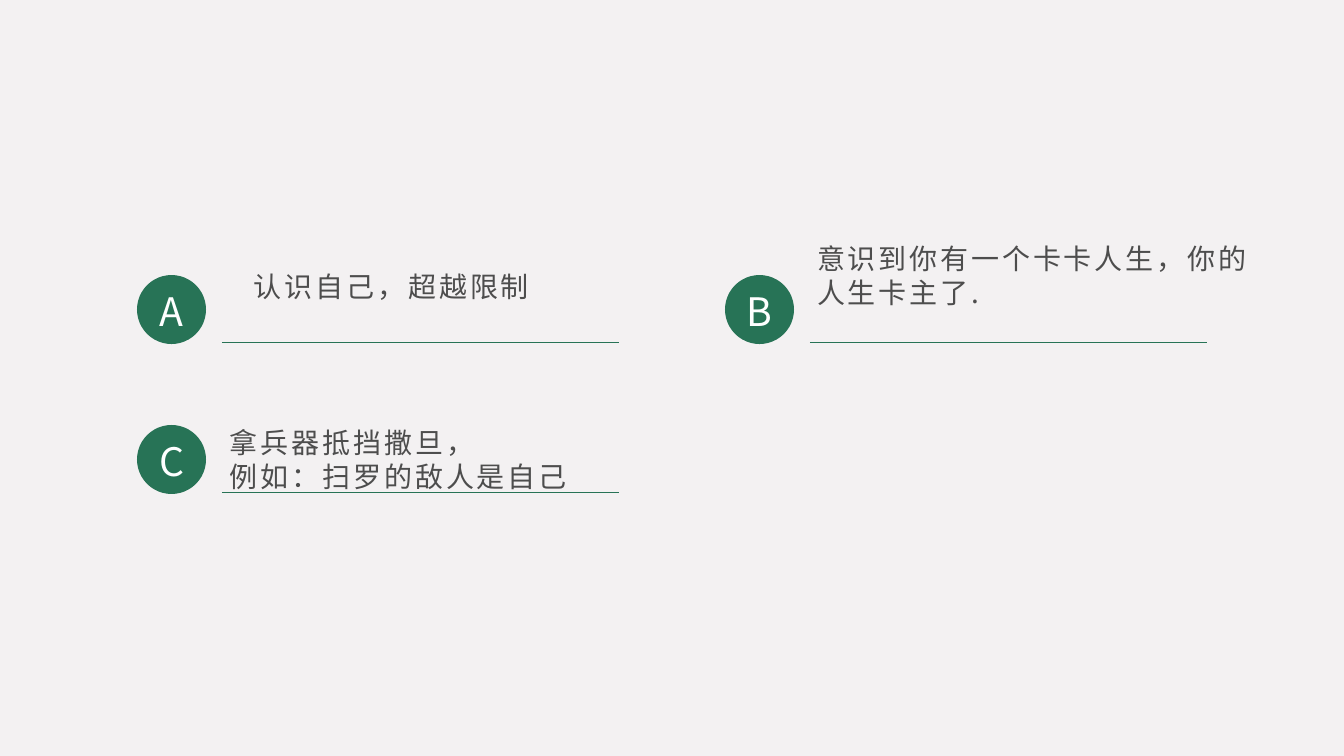
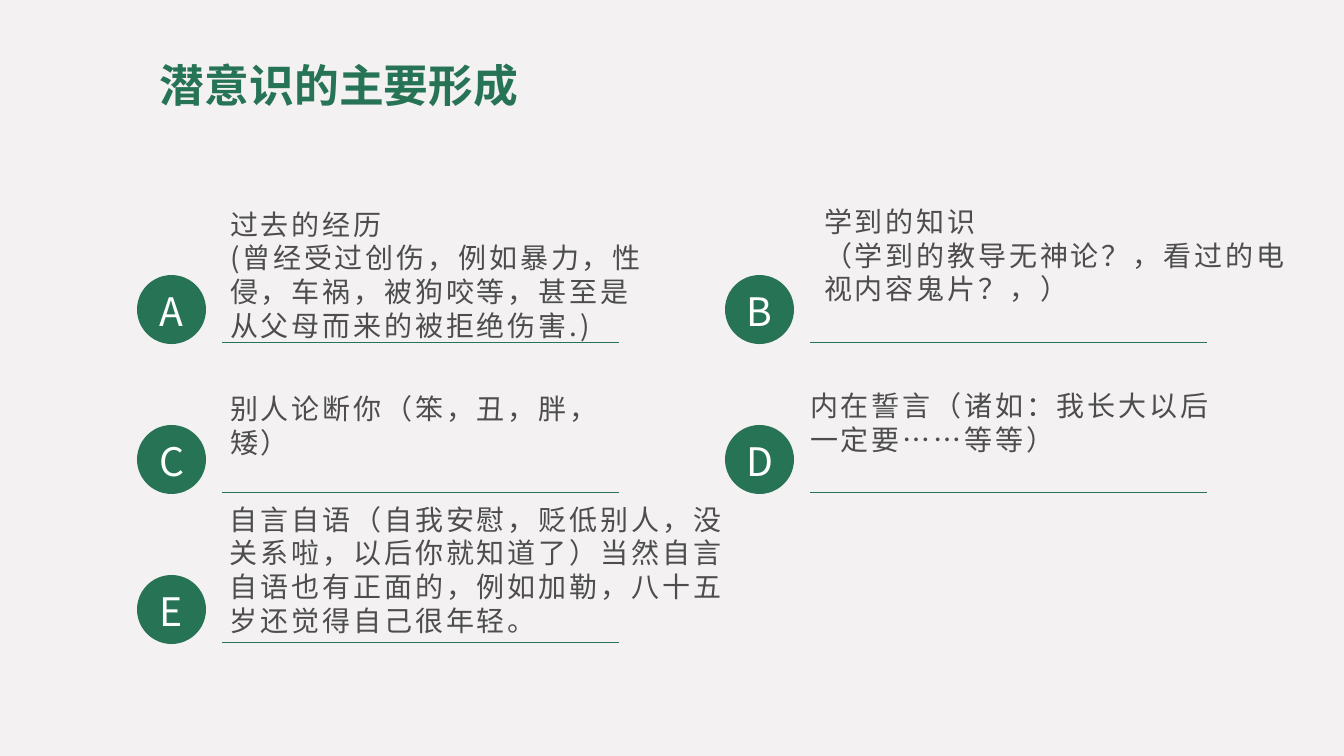
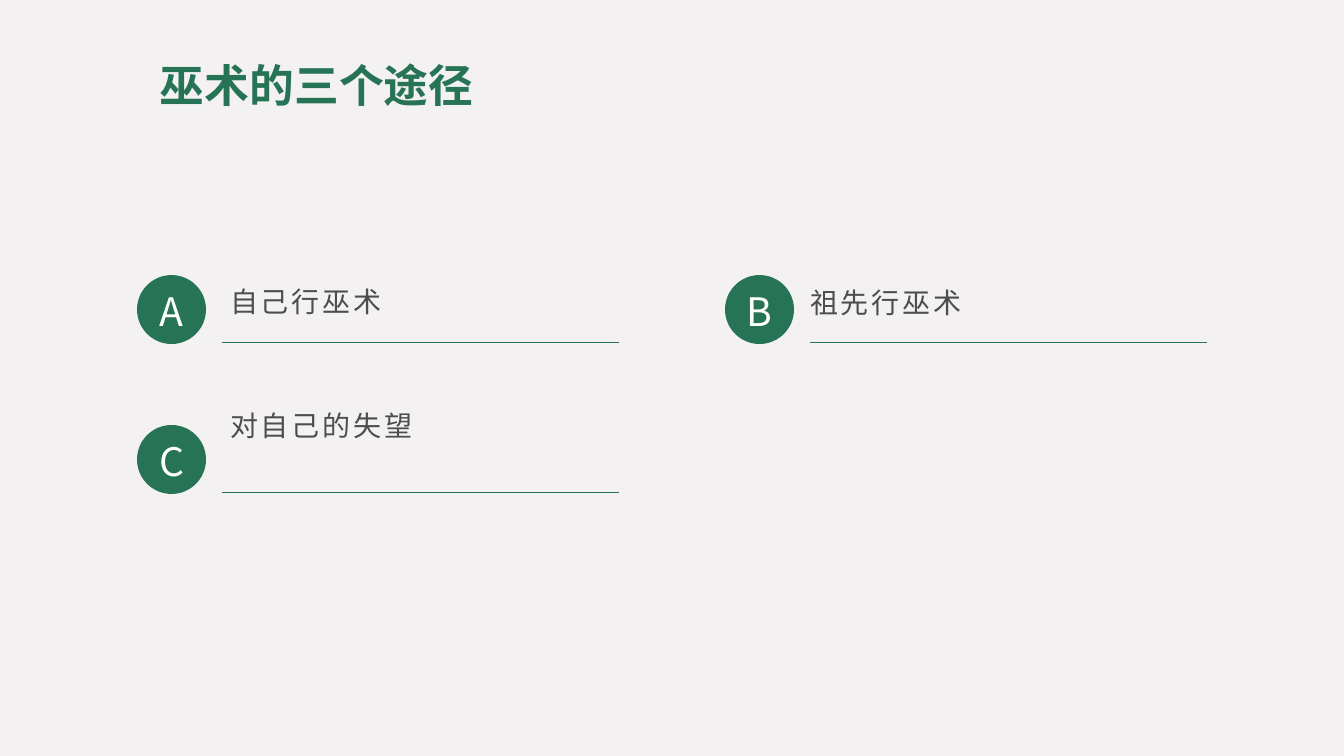
"""Build three slides of lettered points on underlined rows."""
from lxml import etree
from pptx import Presentation
from pptx import util as u
from pptx.dml.color import RGBColor
from pptx.enum import shapes, text
from pptx.oxml.ns import qn

FONT = "Noto Sans CJK SC"
GREEN, GREY, WHITE, PAPER = "277356", "4D4D4D", "FEFFFF", "F3F1F2"
SLIDE_WIDTH, SLIDE_HEIGHT = 1344, 756
SCALE = u.Inches(1) / 100.8
TITLE_BOX = (150, 53, 914, 65)
BADGE_LEFT, BADGE_TOP, BADGE_SIZE = 137, 275, 69
RULE_LEFT, RULE_TOP, RULE_WIDTH = 222, 342, 397
COLUMN_STEP, ROW_STEP, COLUMNS = 588, 150, 2
TEXT_INSET = 8

SLIDES = [
    {"title": None, "points": [
        ("A", 0, (246, 242, 417, 88), ["认识自己，超越限制"]),
        ("B", 1, (809, 226, 465, 98), ["意识到你有一个卡卡人生，你的人生卡主了."]),
        ("C", 2, (222, 406, 481, 107), ["拿兵器抵挡撒旦，", "例如：扫罗的敌人是自己"]),
    ]},
    {"title": "潜意识的主要形成", "points": [
        ("A", 0, (222, 206, 425, 137),
         ["过去的经历", "(曾经受过创伤，例如暴力，性侵，车祸，被狗咬等，甚至是从父母而来的被拒绝伤害.)"]),
        ("B", 1, (816, 186, 493, 138),
         ["学到的知识", "（学到的教导无神论？，看过的电视内容鬼片？，）"]),
        ("C", 2, (222, 371, 425, 108), ["别人论断你（笨，丑，胖，矮）"]),
        ("D", 3, (802, 350, 426, 144), ["内在誓言（诸如：我长大以后一定要……等等）"]),
        ("E", 4, (222, 492, 514, 155),
         ["自言自语（自我安慰，贬低别人，没关系啦，以后你就知道了）"
          "当然自言自语也有正面的，例如加勒，八十五岁还觉得自己很年轻。"]),
    ]},
    {"title": "巫术的三个途径", "points": [
        ("A", 0, (222, 233, 425, 137), ["自己行巫术"]),
        ("B", 1, (802, 233, 493, 138), ["祖先行巫术"]),
        ("C", 2, (222, 371, 425, 108), ["对自己的失望"]),
    ]},
]


def px(*lengths):
    return [u.Emu(round(length * SCALE)) for length in lengths]


def paint(color_format, value):
    color_format.rgb = RGBColor.from_string(value)


def fill_solid(fill, value):
    fill.solid()
    paint(fill.fore_color, value)


def add_run(paragraph, words, size, color, bold=False, spacing=None):
    run = paragraph.add_run()
    run.text = words
    run.font.size = u.Pt(size)
    run.font.bold = bold
    run.font.name = FONT
    paint(run.font.color, color)
    properties = run.font._element
    etree.SubElement(properties, qn("a:ea"), typeface=FONT)
    if spacing:
        properties.set("spc", str(spacing * 100))


def set_frame(frame, anchor, left_inset=0):
    frame.word_wrap = True
    frame.vertical_anchor = anchor
    frame.margin_left = px(left_inset)[0]
    frame.margin_top = frame.margin_right = frame.margin_bottom = 0


def add_title(slide, words):
    frame = slide.shapes.add_textbox(*px(*TITLE_BOX)).text_frame
    frame.word_wrap = True
    frame.auto_size = text.MSO_AUTO_SIZE.SHAPE_TO_FIT_TEXT
    paragraph = frame.paragraphs[0]
    paragraph.alignment = text.PP_ALIGN.JUSTIFY
    add_run(paragraph, words, 32, GREEN, bold=True)


def add_rule(slide, left, top):
    rule = slide.shapes.add_connector(
        shapes.MSO_CONNECTOR.STRAIGHT, *px(left, top, left + RULE_WIDTH, top))
    paint(rule.line.color, GREEN)
    rule.line.width = u.Pt(0.5)
    etree.SubElement(rule._element.spPr, qn("a:effectLst"))


def add_badge(slide, letter, left, top):
    badge = slide.shapes.add_shape(
        shapes.MSO_SHAPE.OVAL, *px(left, top, BADGE_SIZE, BADGE_SIZE))
    badge.shadow.inherit = False
    fill_solid(badge.fill, GREEN)
    badge.line.fill.background()
    set_frame(badge.text_frame, text.MSO_ANCHOR.BOTTOM)
    paragraph = badge.text_frame.paragraphs[0]
    paragraph.alignment = text.PP_ALIGN.CENTER
    paragraph.line_spacing = 1.3
    add_run(paragraph, letter, 28, WHITE)


def add_point(slide, letter, cell, box, lines):
    row, column = divmod(cell, COLUMNS)
    across, down = column * COLUMN_STEP, row * ROW_STEP
    add_rule(slide, RULE_LEFT + across, RULE_TOP + down)
    frame = slide.shapes.add_textbox(*px(*box)).text_frame
    set_frame(frame, text.MSO_ANCHOR.MIDDLE, TEXT_INSET)
    for index, line in enumerate(lines):
        paragraph = frame.add_paragraph() if index else frame.paragraphs[0]
        add_run(paragraph, line, 20, GREY, spacing=2)
    add_badge(slide, letter, BADGE_LEFT + across, BADGE_TOP + down)


def main():
    presentation = Presentation()
    presentation.slide_width, presentation.slide_height = px(SLIDE_WIDTH, SLIDE_HEIGHT)
    fill_solid(presentation.slide_master.background.fill, PAPER)
    for content in SLIDES:
        slide = presentation.slides.add_slide(presentation.slide_layouts[6])
        if content["title"]:
            add_title(slide, content["title"])
        for point in content["points"]:
            add_point(slide, *point)
    presentation.save("out.pptx")


if __name__ == "__main__":
    main()
